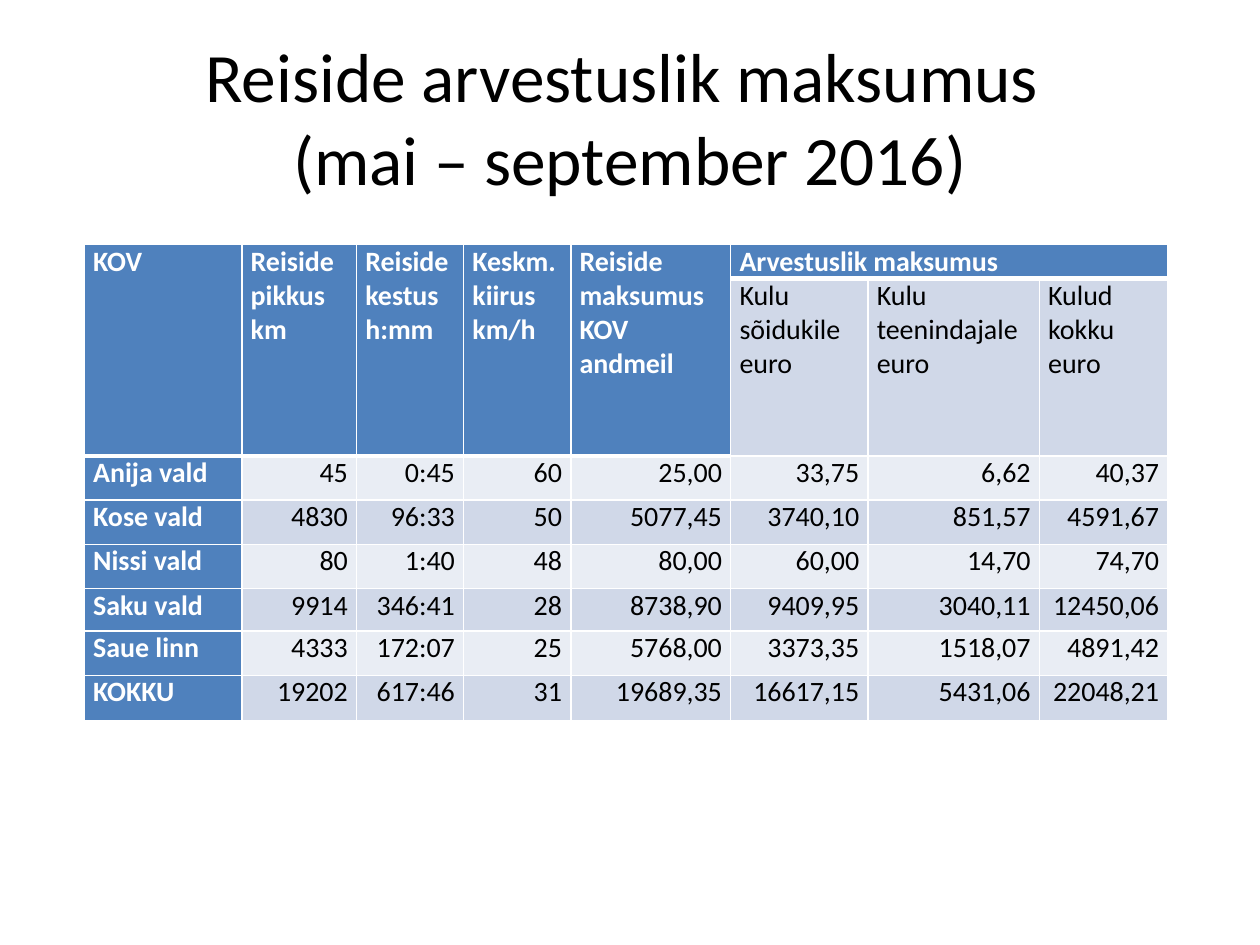
from dataclasses import dataclass

from lxml import etree
from pptx import Presentation
from pptx import util as u
from pptx.dml.color import RGBColor
from pptx.enum import text
from pptx.oxml import ns

FONT = "Calibri"
BLACK = RGBColor(0x00, 0x00, 0x00)
WHITE = RGBColor(0xFF, 0xFF, 0xFF)
HEADER_BLUE = RGBColor(0x4F, 0x81, 0xBD)
BAND_DARK = RGBColor(0xD0, 0xD8, 0xE8)
BAND_LIGHT = RGBColor(0xE9, 0xED, 0xF4)

LEFT = text.PP_ALIGN.LEFT
RIGHT = text.PP_ALIGN.RIGHT
CENTER = text.PP_ALIGN.CENTER
JUSTIFY = text.PP_ALIGN.JUSTIFY

COLUMN_WIDTHS = [1.25, 0.91, 0.85, 0.85, 1.27, 1.09, 1.36, 1.02]
ROW_HEIGHTS = [0.27, 1.41, 0.35, 0.35, 0.35, 0.34, 0.35, 0.36]
TALL_HEADERS = 5


@dataclass(frozen=True)
class Heading:
    row: int
    column: int
    lines: tuple[str, ...]
    align: text.PP_ALIGN = JUSTIFY
    rows: int = 1
    columns: int = 1


HEADINGS = [
    Heading(0, 0, ("KOV",), LEFT, rows=2),
    Heading(0, 1, ("Reiside pikkus km",), LEFT, rows=2),
    Heading(0, 2, ("Reiside kestus h:mm",), LEFT, rows=2),
    Heading(0, 3, ("Keskm. kiirus km/h",), rows=2),
    Heading(0, 4, ("Reiside maksumus KOV andmeil",), rows=2),
    Heading(0, 5, ("Arvestuslik maksumus",), columns=3),
    Heading(1, 5, ("Kulu sõidukile", "euro")),
    Heading(1, 6, ("Kulu teenindajale", "euro")),
    Heading(1, 7, ("Kulud kokku", "euro")),
]

TRIPS = [
    ("Anija vald", "45", "0:45", "60", "25,00", "33,75", "6,62", "40,37"),
    ("Kose vald", "4830", "96:33", "50", "5077,45", "3740,10", "851,57", "4591,67"),
    ("Nissi vald", "80", "1:40", "48", "80,00", "60,00", "14,70", "74,70"),
    ("Saku vald", "9914", "346:41", "28", "8738,90", "9409,95", "3040,11", "12450,06"),
    ("Saue linn", "4333", "172:07", "25", "5768,00", "3373,35", "1518,07", "4891,42"),
    ("KOKKU", "19202", "617:46", "31", "19689,35", "16617,15", "5431,06", "22048,21"),
]


def add_span(para, content: str, size: float, color: RGBColor, bold: bool = False) -> None:
    span = para.add_run()
    span.text = content
    span.font.name = FONT
    span.font.size = u.Pt(size)
    span.font.bold = bold
    span.font.color.rgb = color


def is_header(row: int, column: int) -> bool:
    return row == 0 or column == 0 or (row == 1 and column < TALL_HEADERS)


def has_thick_bottom(row: int, column: int) -> bool:
    return row == 0 or (row == 1 and column < TALL_HEADERS)


def add_border(cell, side: str, points: float) -> None:
    properties = cell._tc.get_or_add_tcPr()
    line = etree.SubElement(properties, ns.qn(f"a:ln{side}"), w=str(u.Pt(points)))
    fill = etree.SubElement(line, ns.qn("a:solidFill"))
    etree.SubElement(fill, ns.qn("a:srgbClr"), val=str(WHITE))


def style_cell(cell, row: int, column: int) -> None:
    top = 3 if row > 0 and has_thick_bottom(row - 1, column) else 1
    bottom = 3 if has_thick_bottom(row, column) else 1
    for side, points in (("L", 1), ("R", 1), ("T", top), ("B", bottom)):
        add_border(cell, side, points)
    band = BAND_DARK if row % 2 else BAND_LIGHT
    cell.fill.solid()
    cell.fill.fore_color.rgb = HEADER_BLUE if is_header(row, column) else band
    cell.margin_left = cell.margin_right = u.Inches(0.07)
    cell.margin_top = cell.margin_bottom = 0


def write_cell(table, row: int, column: int, lines: tuple[str, ...], align) -> None:
    frame = table.cell(row, column).text_frame
    header = is_header(row, column)
    for index, line in enumerate(lines):
        para = frame.paragraphs[0] if index == 0 else frame.add_paragraph()
        para.alignment = align
        add_span(para, line, 16, WHITE if header else BLACK, header)


def add_title(page) -> None:
    box = page.shapes.add_textbox(u.Inches(0.5), u.Inches(0.3), u.Inches(9), u.Inches(1.25))
    frame = box.text_frame
    frame.word_wrap = True
    frame.vertical_anchor = text.MSO_ANCHOR.MIDDLE
    para = frame.paragraphs[0]
    para.alignment = CENTER
    add_span(para, "Reiside arvestuslik maksumus ", 39.6, BLACK)
    para.add_line_break()
    add_span(para, "(mai – september 2016)", 39.6, BLACK)


def add_cost_table(page) -> None:
    table = page.shapes.add_table(
        len(ROW_HEIGHTS), len(COLUMN_WIDTHS), u.Inches(0.67), u.Inches(1.94),
        u.Inches(sum(COLUMN_WIDTHS)), u.Inches(sum(ROW_HEIGHTS)),
    ).table
    for column, width in zip(table.columns, COLUMN_WIDTHS):
        column.width = u.Inches(width)
    for row, height in zip(table.rows, ROW_HEIGHTS):
        row.height = u.Inches(height)
    for row in range(len(ROW_HEIGHTS)):
        for column in range(len(COLUMN_WIDTHS)):
            style_cell(table.cell(row, column), row, column)
    for item in HEADINGS:
        if item.rows * item.columns > 1:
            end = table.cell(item.row + item.rows - 1, item.column + item.columns - 1)
            table.cell(item.row, item.column).merge(end)
        write_cell(table, item.row, item.column, item.lines, item.align)
    for row, trip in enumerate(TRIPS, start=2):
        for column, value in enumerate(trip):
            write_cell(table, row, column, (value,), RIGHT if column else LEFT)


def main() -> None:
    deck = Presentation()
    deck.slide_width = u.Inches(10)
    deck.slide_height = u.Inches(7.5)
    page = deck.slides.add_slide(deck.slide_layouts[6])
    add_title(page)
    add_cost_table(page)
    deck.save("out.pptx")


if __name__ == "__main__":
    main()
